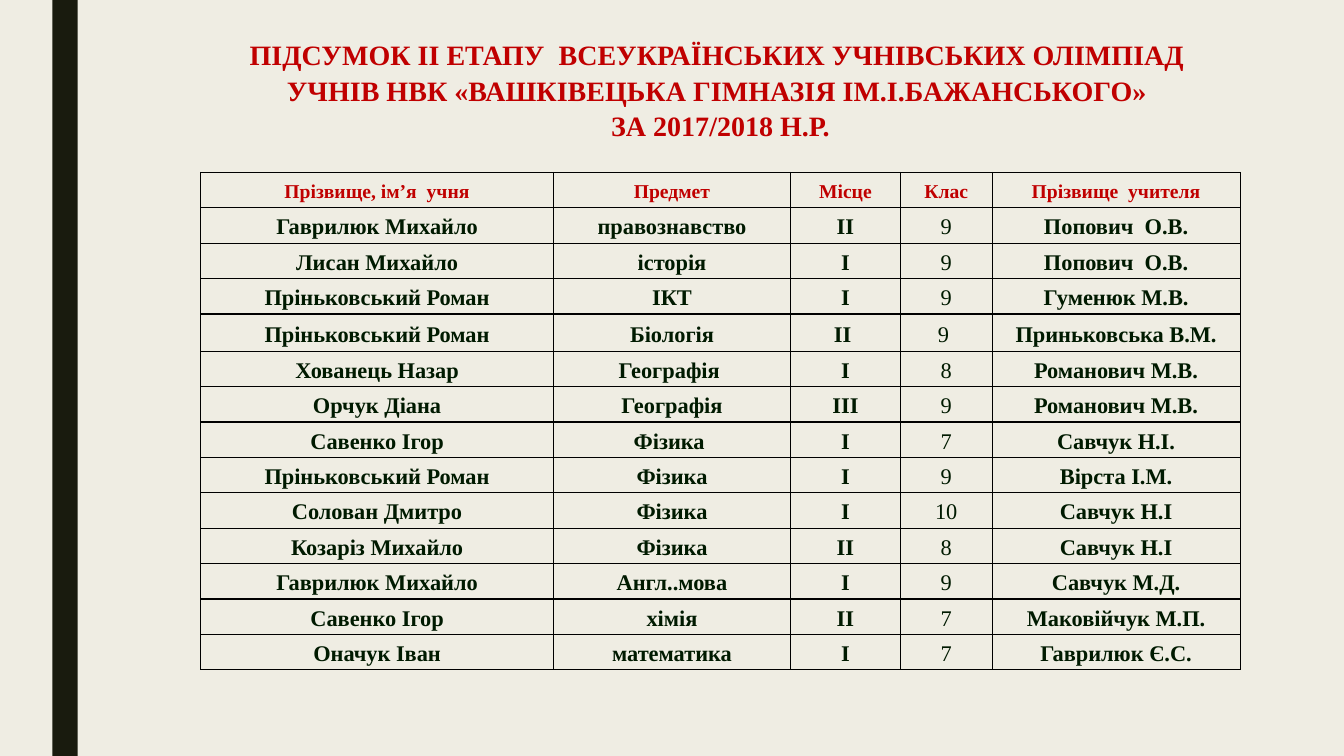
from dataclasses import dataclass

from lxml.etree import SubElement
from pptx import Presentation
from pptx.dml.color import RGBColor as RGB
from pptx.enum.shapes import MSO_SHAPE as SHAPE
from pptx.enum.text import MSO_ANCHOR as ANCHOR, PP_ALIGN as ALIGN
from pptx.oxml.ns import qn
from pptx.util import Inches, Pt


@dataclass(frozen=True)
class Theme:
    """Colours, font and type sizes of the slide."""
    background: str = "EFEDE3"
    stripe: str = "191B0E"
    accent: str = "C00000"
    ink: str = "001A00"
    border: str = "000000"
    font: str = "Times New Roman"
    title: int = 20
    header: int = 14
    body: int = 16


THEME = Theme()

TITLE = (
    "ПІДСУМОК ІІ ЕТАПУ  ВСЕУКРАЇНСЬКИХ УЧНІВСЬКИХ ОЛІМПІАД ",
    " УЧНІВ НВК «ВАШКІВЕЦЬКА ГІМНАЗІЯ ІМ.І.БАЖАНСЬКОГО»  ",
    "ЗА 2017/2018 Н.Р.",
)
RESULTS = (
    ("Прізвище, ім’я  учня", "Предмет", "Місце", "Клас", "Прізвище  учителя"),
    ("Гаврилюк Михайло", "правознавство", "ІІ", "9", "Попович  О.В."),
    ("Лисан Михайло", "історія", "І", "9", "Попович  О.В."),
    ("Пріньковський Роман", "ІКТ", "І", "9", "Гуменюк М.В."),
    ("Пріньковський Роман", "Біологія", "ІІ ", "9 ", "Приньковська В.М."),
    ("Хованець Назар", "Географія ", "І", "8", "Романович М.В."),
    ("Орчук Діана", "Географія", "ІІІ", "9", "Романович М.В."),
    ("Савенко Ігор", "Фізика ", "І", "7", "Савчук Н.І."),
    ("Пріньковський Роман", "Фізика", "І", "9", "Вірста І.М."),
    ("Солован Дмитро", "Фізика", "І", "10", "Савчук Н.І"),
    ("Козаріз Михайло", "Фізика", "ІІ", "8", "Савчук Н.І"),
    ("Гаврилюк Михайло", "Англ..мова", "І", "9", "Савчук М.Д."),
    ("Савенко Ігор", "хімія", "ІІ", "7", "Маковійчук М.П."),
    ("Оначук Іван", "математика", "І", "7", "Гаврилюк Є.С."),
)
COLUMN_WIDTHS = (3.5, 2.35, 1.09, 0.91, 2.46)
CLASS_COLUMN = 3
TALL_ROW, TALL_HEIGHT = 4, 0.37


def style_paragraph(p, size, color, bold=True, spacing=1.15):
    """Centre a paragraph and set its font."""
    p.alignment = ALIGN.CENTER
    p.line_spacing = spacing
    p.font.name = THEME.font
    p.font.size = Pt(size)
    p.font.bold = bold
    p.font.color.rgb = RGB.from_string(color)


def add_stripe(s, left, top, width, height):
    """Draw the dark vertical stripe."""
    sp = s.shapes.add_shape(SHAPE.RECTANGLE, Inches(left), Inches(top),
                            Inches(width), Inches(height))
    sp.shadow.inherit = False
    sp.fill.solid()
    sp.fill.fore_color.rgb = RGB.from_string(THEME.stripe)
    sp.line.fill.background()


def add_title(s, left, top, width, height):
    """Write the three-line heading."""
    tf = s.shapes.add_textbox(Inches(left), Inches(top),
                              Inches(width), Inches(height)).text_frame
    tf.word_wrap = True
    tf.vertical_anchor = ANCHOR.MIDDLE
    for i, line in enumerate(TITLE):
        p = tf.add_paragraph() if i else tf.paragraphs[0]
        p.text = line
        style_paragraph(p, THEME.title, THEME.accent, spacing=1.06)


def add_borders(cell):
    """Outline all four sides of a cell."""
    props = cell._tc.get_or_add_tcPr()
    for i, side in enumerate(("lnL", "lnR", "lnT", "lnB")):
        ln = props.makeelement(qn(f"a:{side}"), {"w": str(Pt(1))})
        props.insert(i, ln)
        fill = SubElement(ln, qn("a:solidFill"))
        SubElement(fill, qn("a:srgbClr"), val=THEME.border)


def fill_cell(cell, text, size, color, bold):
    """Write one bordered, unfilled table cell."""
    cell.fill.background()
    add_borders(cell)
    cell.margin_left = cell.margin_right = Inches(0.07)
    cell.margin_top = cell.margin_bottom = 0
    cell.vertical_anchor = ANCHOR.MIDDLE
    p = cell.text_frame.paragraphs[0]
    p.text = text
    style_paragraph(p, size, color, bold)


def add_results(s, left, top, width, height):
    """Build the table of olympiad results."""
    table = s.shapes.add_table(len(RESULTS), len(COLUMN_WIDTHS), Inches(left),
                               Inches(top), Inches(width), Inches(height)).table
    for column, share in zip(table.columns, COLUMN_WIDTHS):
        column.width = Inches(width * share / sum(COLUMN_WIDTHS))
    row_height = (height - TALL_HEIGHT) / (len(RESULTS) - 1)
    for r, values in enumerate(RESULTS):
        table.rows[r].height = Inches(TALL_HEIGHT if r == TALL_ROW else row_height)
        size, color = (THEME.body, THEME.ink) if r else (THEME.header, THEME.accent)
        for c, text in enumerate(values):
            bold = r == 0 or c != CLASS_COLUMN
            fill_cell(table.cell(r, c), text, size, color, bold)


def add_results_slide(prs):
    """Compose the results slide."""
    s = prs.slides.add_slide(prs.slide_layouts[6])
    s.background.fill.solid()
    s.background.fill.fore_color.rgb = RGB.from_string(THEME.background)
    add_stripe(s, 0.52, 0, 0.25, 7.5)
    add_results(s, 1.99, 1.71, 10.31, 4.94)
    add_title(s, 2.29, 0.33, 9.71, 1.11)


def main():
    """Create the presentation."""
    prs = Presentation()
    prs.slide_width = Inches(13.33)
    prs.slide_height = Inches(7.5)
    add_results_slide(prs)
    prs.save("out.pptx")


if __name__ == "__main__":
    main()
